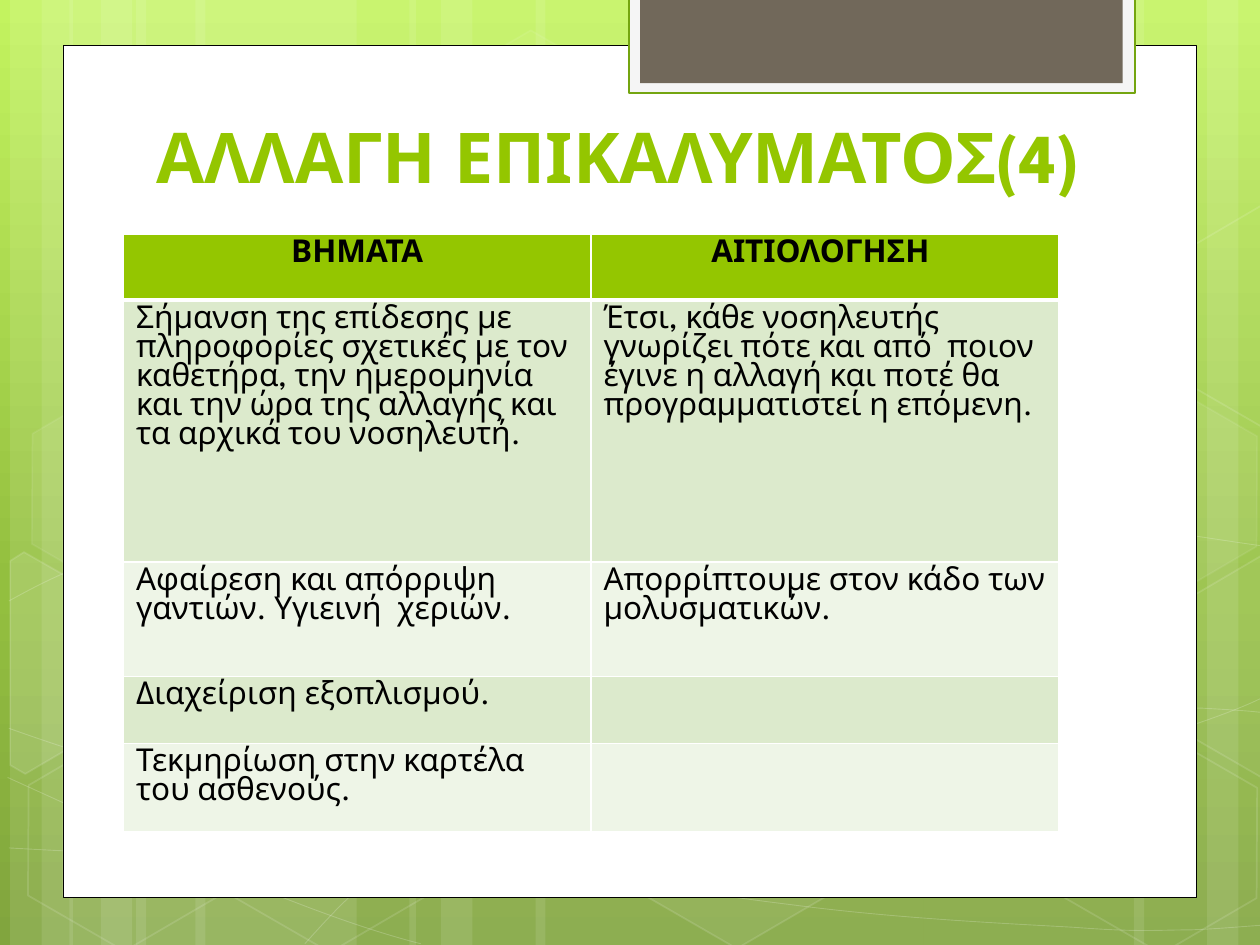
from copy import deepcopy
from dataclasses import dataclass
from math import cos, radians, sin

from lxml.etree import Element, SubElement
from pptx import Presentation
from pptx.dml.color import RGBColor as Rgb
from pptx.enum.shapes import MSO_SHAPE as Kind
from pptx.enum.text import MSO_ANCHOR as Anchor, PP_ALIGN as Align
from pptx.oxml.ns import qn
from pptx.util import Inches, Pt


@dataclass(frozen=True)
class Theme:
    font: str = "League Spartan"
    white: str = "FFFFFF"
    black: str = "000000"
    green: str = "94C600"
    edge: str = "74A510"
    pale: str = "F5F5F5"
    brown: str = "71685A"
    bands: tuple = ("DCEACC", "EEF5E7")
    sky: tuple = ((0, "C3F35F"), (0.62, "93BF3F"), (1, "81A53E"))
    head: int = 40
    body: int = 18


THEME = Theme()
TURN = 30
STRIPES = [(1.08, 1.75), (0.08, 0.5), (0.33, 0.83), (1.55, 1.75), (0.55, 0.5), (0.8, 0.83),
           (7.33, 1.75), (9.58, 0.5), (9, 0.83), (4.25, 3.08), (3.25, 0.5), (3.5, 0.83)]
WAVES = [
    [(0.07, 6.73), (0.61, 6.76), (1.15, 6.79), (1.9, 6.78), (2.65, 6.77), (3.58, 6.75),
     (4.58, 6.65), (5.58, 6.55), (7, 6.36), (7.92, 6.17), (8.83, 5.98), (9.77, 5.68),
     (10.07, 5.51)],
    [(0.07, 4.77), (0.36, 4.61), (0.65, 4.46), (1.21, 4.31), (1.78, 4.16), (2.59, 3.94),
     (3.47, 3.87), (4.36, 3.8), (5.44, 3.79), (6.54, 3.87), (7.64, 3.95), (9.47, 4.26),
     (10.07, 4.34)],
    [(0.06, 6.17), (1.27, 6.72), (2.47, 7.27), (3.34, 7.49)],
    [(0.07, 5.78), (0.38, 5.89), (0.7, 6), (1.28, 6.16), (1.86, 6.31), (2.73, 6.56),
     (3.57, 6.73), (4.4, 6.9), (5.45, 7.08), (6.28, 7.18), (7.11, 7.29), (8, 7.33),
     (8.53, 7.36), (9.05, 7.4), (9.19, 7.38), (9.45, 7.38), (9.71, 7.37), (9.89, 7.35),
     (10.07, 7.34)],
    [(2.42, 7.49), (2.6, 7.29), (2.78, 7.09), (3.02, 6.91), (3.26, 6.73), (3.6, 6.53),
     (3.88, 6.39), (4.16, 6.25), (4.33, 6.19), (4.7, 6.09), (5.06, 5.99), (5.73, 5.85),
     (6.08, 5.78), (6.44, 5.71), (6.49, 5.71), (6.8, 5.69), (7.11, 5.66), (7.6, 5.63),
     (7.94, 5.62), (8.29, 5.61), (8.86, 5.62), (8.86, 5.62), (8.86, 5.62), (9.53, 5.62),
     (9.53, 5.62), (9.71, 5.63), (9.88, 5.64), (9.97, 5.65), (10.06, 5.66), (10.03, 5.65),
     (10.06, 5.66)],
]
HEXES = [(3.34, 0.36, 4, 8), (4.97, 5.89, 6, 12), (0.11, 5.91, 0, 12), (0.14, 3.12, 7, 8),
         (1.74, 5.92, 0, 12), (7.53, 4.53, 10, 12), (8.34, 5.93, 0, 12), (8.34, 3.14, 7, 8)]
CUTS = [
    ((0.36, 5.35), 10, [(0.08, 4.45), (0.19, 4.38), (0.96, 4.82), (0.95, 5.7),
                        (0.2, 6.14), (0.08, 6.07)]),
    ((9.85, 5.2), 4, [(9.26, 4.85), (10.01, 4.41), (10.09, 4.46), (10.09, 6.13),
                      (10.02, 6.17), (9.26, 5.73)]),
    ((9.85, 2.41), 0, [(9.26, 2.07), (10.01, 1.63), (10.1, 1.68), (10.09, 3.35),
                       (10.02, 3.39), (9.26, 2.95)]),
]
ROWS = [
    (0.52, "ΒΗΜΑΤΑ", "ΑΙΤΙΟΛΟΓΗΣΗ "),
    (2.08, "Σήμανση της επίδεσης με πληροφορίες σχετικές με τον καθετήρα, "
     "την ημερομηνία και την ώρα της αλλαγής και τα αρχικά του νοσηλευτή.",
     "Έτσι, κάθε νοσηλευτής γνωρίζει πότε και από  ποιον έγινε η αλλαγή "
     "και ποτέ θα προγραμματιστεί η επόμενη."),
    (0.91, "Αφαίρεση και απόρριψη γαντιών. Υγιεινή  χεριών.",
     "Απορρίπτουμε στον κάδο των μολυσματικών."),
    (0.53, "Διαχείριση εξοπλισμού.", ""),
    (0.7, "Τεκμηρίωση στην καρτέλα του ασθενούς.", ""),
]


def write(frame, text, size=THEME.body, color=THEME.black, bold=False, align=Align.LEFT):
    para = frame.paragraphs[0]
    para.alignment = align
    run = para.add_run()
    run.text = text
    font = run.font
    font.name, font.size, font.bold = THEME.font, Pt(size), bold
    font.color.rgb = Rgb.from_string(color)


def fade(node, alpha):
    color = node.find(qn("a:solidFill")).find(qn("a:srgbClr"))
    SubElement(color, qn("a:alpha")).set("val", str(alpha * 1000))


def paint(shape, fill=None, line=None, width=1, alpha=100, glow=100):
    shape.shadow.inherit = False
    props = shape.element.spPr
    if fill and alpha:
        shape.fill.solid()
        shape.fill.fore_color.rgb = Rgb.from_string(fill)
        if alpha < 100:
            fade(props, alpha)
    else:
        shape.fill.background()
    if line:
        shape.line.color.rgb = Rgb.from_string(line)
        shape.line.width = Pt(width)
        if glow < 100:
            fade(props.find(qn("a:ln")), glow)
    else:
        shape.line.fill.background()


def block(slide, box, kind=Kind.RECTANGLE, **look):
    shape = slide.shapes.add_shape(kind, *map(Inches, box))
    paint(shape, **look)
    return shape


def trace(slide, points, close, **look):
    spots = [(Inches(x), Inches(y)) for x, y in points]
    pen = slide.shapes.build_freeform(*spots[0])
    pen.add_line_segments(spots[1:], close=close)
    shape = pen.convert_to_shape()
    paint(shape, **look)
    return shape


def bend(shape, points):
    legs = list(shape.element.iter(qn("a:lnTo")))
    track = legs[0].getparent()
    for i in range(0, len(legs), 3):
        flat = points[i] == points[i + 1]
        part = SubElement(track, qn("a:lnTo" if flat else "a:cubicBezTo"))
        for leg in legs[i + 2 if flat else i:i + 3]:
            part.append(leg[0])
    for leg in legs:
        track.remove(leg)


def unturn(points, pivot):
    c, s = cos(radians(TURN)), sin(radians(TURN))
    px, py = pivot
    return [(px + (x - px) * c + (y - py) * s, py + (y - py) * c - (x - px) * s)
            for x, y in points]


def draw_sky(slide, box):
    fill = slide.background.fill
    fill.gradient()
    fill.gradient_angle = 270
    stops = next(slide.element.iter(qn("a:gsLst")))
    stops.append(deepcopy(stops[-1]))
    for stop, (place, color) in zip(fill.gradient_stops, THEME.sky):
        stop.position = place
        stop.color.rgb = Rgb.from_string(color)
    left, top, _, high = box
    white = THEME.white
    for x, wide in STRIPES:
        block(slide, (left + x, top, wide, high), fill=white, alpha=10)
    for wave in WAVES:
        bend(trace(slide, wave, False, line=white, width=0.5, glow=20), wave)
    for x, y, alpha, glow in HEXES:
        shape = block(slide, (left + x, top + y, 1.75, 1.52), Kind.HEXAGON,
                      fill=white, line=white, alpha=alpha, glow=glow)
        shape.adjustments[0] = 0.285
        shape.rotation = TURN
    for pivot, alpha, points in CUTS:
        shape = trace(slide, unturn(points, pivot), True, fill=white, line=white,
                      alpha=alpha, glow=12)
        shape.rotation = TURN


def draw_tab(slide, box):
    left, top, wide, high = box
    block(slide, box, fill=THEME.pale, line=THEME.edge, width=1.25)
    block(slide, (left + 0.09, top, wide - 0.19, high - 0.08), fill=THEME.brown)


def draw_title(slide, box, text):
    title = slide.shapes.title
    slide.shapes.element.append(title.element)
    title.left, title.top, title.width, title.height = map(Inches, box)
    title.text_frame.vertical_anchor = Anchor.BOTTOM
    write(title.text_frame, text, size=THEME.head, color=THEME.green, bold=True)


def edge(props, row):
    thick = {0: "lnB", 1: "lnT"}.get(row)
    for i, side in enumerate(("lnL", "lnR", "lnT", "lnB")):
        line = Element(qn("a:" + side), w=str(Pt(3 if side == thick else 1)))
        fill = SubElement(line, qn("a:solidFill"))
        SubElement(fill, qn("a:srgbClr")).set("val", THEME.white)
        props.insert(i, line)


def draw_table(slide, box):
    frame = slide.shapes.add_table(len(ROWS), 2, *map(Inches, box))
    table = frame.table
    for r, (high, *texts) in enumerate(ROWS):
        table.rows[r].height = Inches(high)
        head = r == 0
        fill = THEME.green if head else THEME.bands[(r - 1) % 2]
        for cell, text in zip(table.rows[r].cells, texts):
            cell.fill.solid()
            cell.fill.fore_color.rgb = Rgb.from_string(fill)
            if text:
                write(cell.text_frame, text, bold=head, align=Align.CENTER if head else Align.LEFT)
    for i, props in enumerate(frame.element.iter(qn("a:tcPr"))):
        edge(props, i // 2)


def main():
    deck = Presentation()
    deck.slide_width, deck.slide_height = Inches(10), Inches(7.5)
    slide = deck.slides.add_slide(deck.slide_layouts[5])
    draw_sky(slide, (0, 0, 10, 7.5))
    block(slide, (0.5, 0.36, 9, 6.76), fill=THEME.white, line=THEME.black, width=0.5)
    draw_tab(slide, (4.99, -0.02, 4.02, 0.76))
    draw_title(slide, (1.14, 0.6, 7.68, 1.02), "ΑΛΛΑΓΗ ΕΠΙΚΑΛΥΜΑΤΟΣ(4)")
    draw_table(slide, (0.98, 1.86, 7.42, 4.74))
    deck.save("out.pptx")


if __name__ == "__main__":
    main()
